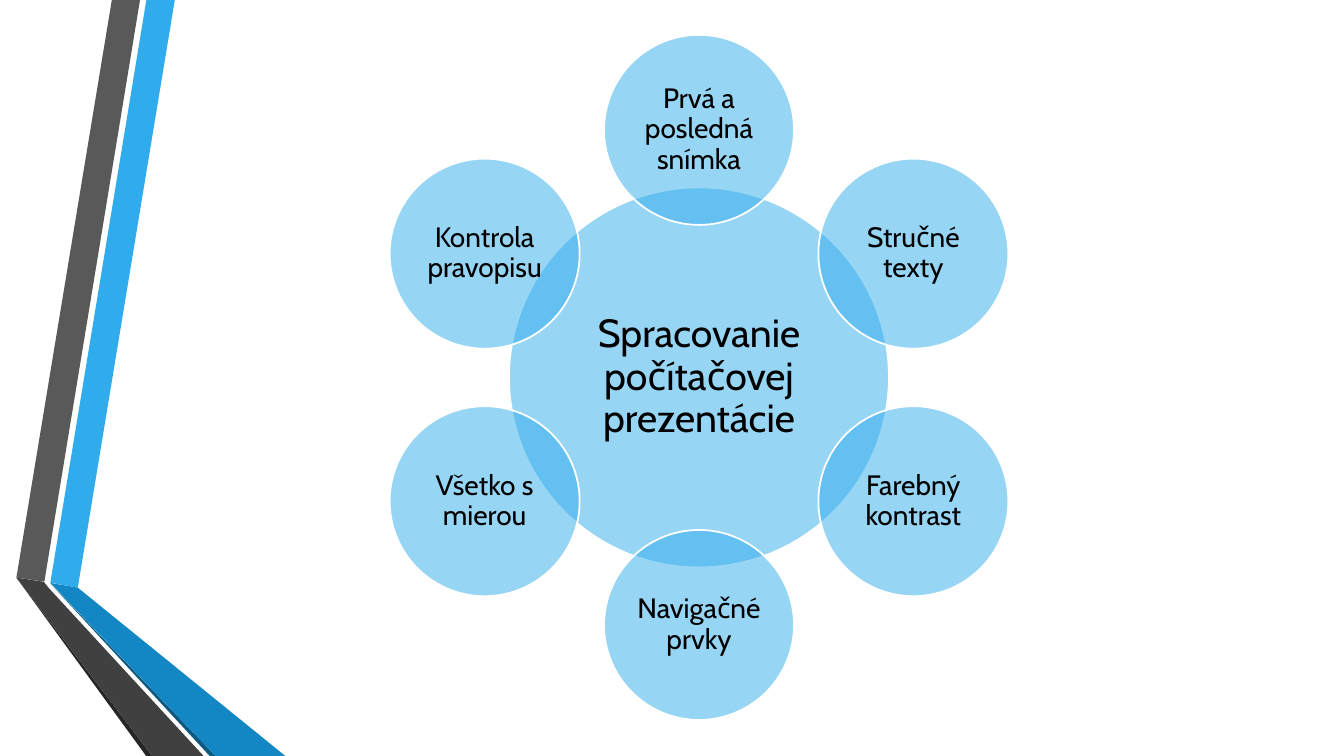
import math

import pptx
import pptx.dml.color
import pptx.enum.shapes
import pptx.enum.text
import pptx.oxml.ns
import pptx.util
from lxml import etree

Pt = pptx.util.Pt
RGBColor = pptx.dml.color.RGBColor

BLUE = RGBColor(0x30, 0xAC, 0xEC)
MID_BLUE = RGBColor(0x12, 0x87, 0xC3)
DEEP_BLUE = RGBColor(0x0C, 0x5A, 0x82)
GREY = RGBColor(0x59, 0x59, 0x59)
DARK_GREY = RGBColor(0x40, 0x40, 0x40)
DEEP_GREY = RGBColor(0x26, 0x26, 0x26)
WHITE = RGBColor(0xFF, 0xFF, 0xFF)
BLACK = RGBColor(0, 0, 0)

MID_X, MID_Y = 499.3, 269.6
RING = 176.8
HUB_SIZE = 271.4
NODE_SIZE = HUB_SIZE / 2

deck = pptx.Presentation()
deck.slide_width, deck.slide_height = Pt(960), Pt(540)
slide = deck.slides.add_slide(deck.slide_layouts[6])


def add_disc(text, x, y, size, font_size, inset):
    """Add a half-transparent labelled circle centred on x, y."""
    disc = slide.shapes.add_shape(
        pptx.enum.shapes.MSO_SHAPE.OVAL,
        Pt(x - size / 2), Pt(y - size / 2), Pt(size), Pt(size))
    disc.shadow.inherit = False
    disc.fill.solid()
    disc.fill.fore_color.rgb = BLUE
    color = disc.fill._xPr.find(".//" + pptx.oxml.ns.qn("a:srgbClr"))
    etree.SubElement(color, pptx.oxml.ns.qn("a:alpha"), val="50000")
    disc.line.color.rgb = WHITE
    disc.line.width = Pt(1.25)

    frame = disc.text_frame
    frame.word_wrap = True
    frame.vertical_anchor = pptx.enum.text.MSO_ANCHOR.MIDDLE
    frame.margin_left = frame.margin_right = Pt(inset)
    frame.margin_top = frame.margin_bottom = Pt(inset)
    frame.text = text
    para = frame.paragraphs[0]
    para.alignment = pptx.enum.text.PP_ALIGN.CENTER
    para.line_spacing = 0.9
    font = para.runs[0].font
    font.name = "Cabin"
    font.size = Pt(font_size)
    font.color.rgb = BLACK


# Folded ribbons on the left edge
ribbons = [
    (BLUE, [(36, 416.2), (55.6, 419.8), (124.9, 0), (104.6, 0)]),
    (GREY, [(100, 0), (79.9, 0), (11.7, 412.6), (31.7, 415.5)]),
    (DEEP_GREY, [(11.7, 412.6), (104.4, 540), (108.7, 540)]),
    (DEEP_BLUE, [(36, 416.8), (149.8, 540), (154.1, 540)]),
    (MID_BLUE, [(36, 416.4), (154.1, 540), (203.8, 540), (55.6, 419.8)]),
    (DARK_GREY, [(145.4, 540), (34.6, 419.8), (31.3, 415.6), (11.7, 412.6),
                 (108.7, 540)]),
]
for color, points in ribbons:
    corners = [(Pt(x), Pt(y)) for x, y in points]
    outline = slide.shapes.build_freeform(*corners[0])
    outline.add_line_segments(corners[1:], close=True)
    ribbon = outline.convert_to_shape()
    ribbon.shadow.inherit = False
    ribbon.fill.solid()
    ribbon.fill.fore_color.rgb = color
    ribbon.line.fill.background()

# Hub with six topics, clockwise from the top
add_disc("Spracovanie počítačovej prezentácie", MID_X, MID_Y, HUB_SIZE, 28, 2.8)
topics = ["Prvá a posledná snímka", "Stručné texty", "Farebný kontrast",
          "Navigačné prvky", "Všetko s mierou", "Kontrola pravopisu"]
for index, topic in enumerate(topics):
    angle = math.tau * index / len(topics)
    add_disc(topic, MID_X + RING * math.sin(angle),
             MID_Y - RING * math.cos(angle), NODE_SIZE, 20, 2)

deck.save("out.pptx")
